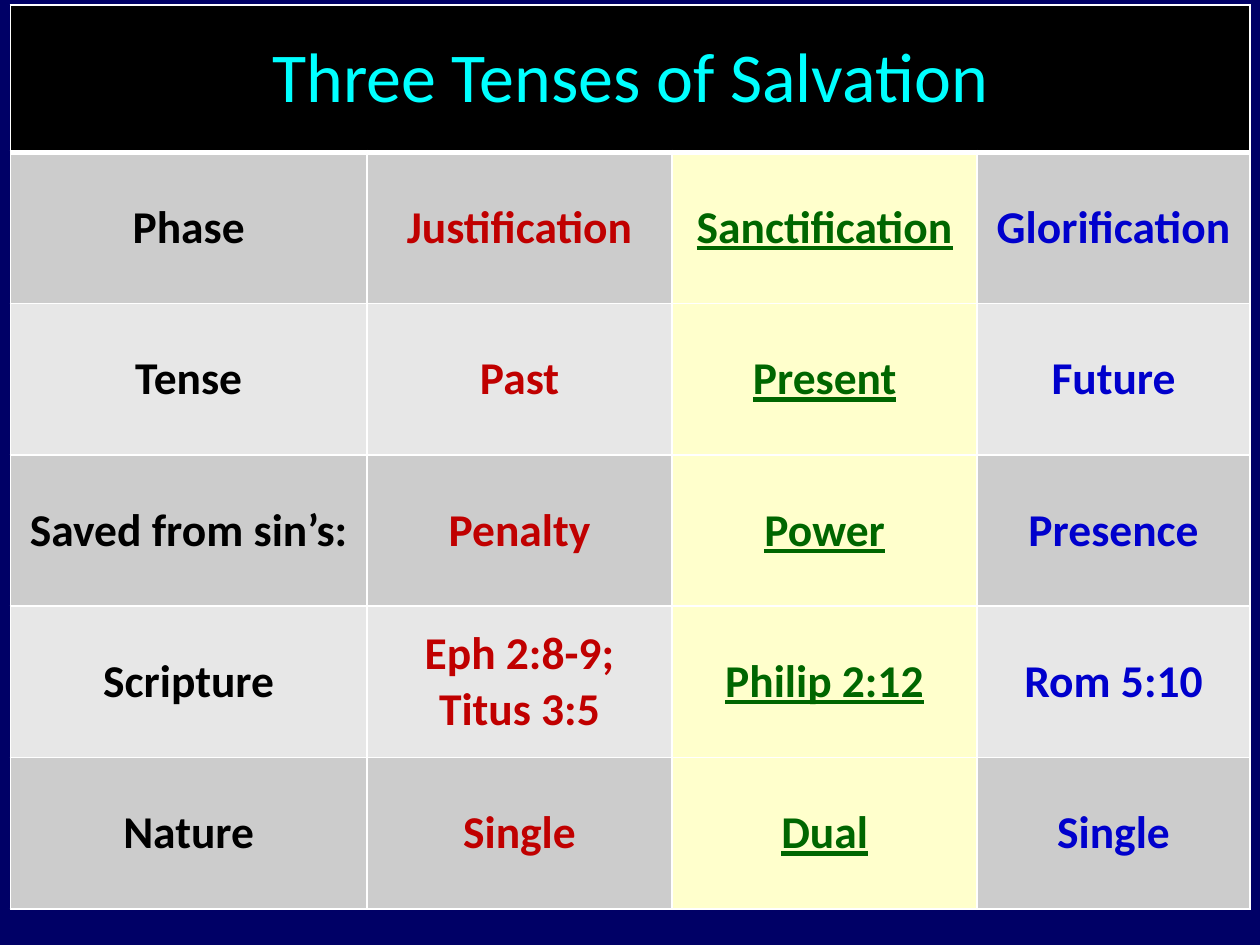
from lxml.etree import SubElement
from pptx import Presentation
from pptx.dml.color import RGBColor
from pptx.enum.text import MSO_ANCHOR, PP_ALIGN
from pptx.oxml.ns import qn
from pptx.util import Cm, Pt

NAVY = RGBColor(0x00, 0x00, 0x66)
BLACK = RGBColor(0x00, 0x00, 0x00)
WHITE = RGBColor(0xFF, 0xFF, 0xFF)
CYAN = RGBColor(0x00, 0xFF, 0xFF)
RED = RGBColor(0xC0, 0x00, 0x00)
GREEN = RGBColor(0x00, 0x66, 0x00)
BLUE = RGBColor(0x00, 0x00, 0xCC)
YELLOW = RGBColor(0xFF, 0xFF, 0xCC)
DARK_GREY = RGBColor(0xCC, 0xCC, 0xCC)
LIGHT_GREY = RGBColor(0xE7, 0xE7, 0xE7)

FONT = "Calibri"
TITLE = "Three Tenses of Salvation"
ROWS = [
    ("Phase", "Justification", "Sanctification", "Glorification"),
    ("Tense", "Past", "Present", "Future"),
    ("Saved from sin’s:", "Penalty", "Power", "Presence"),
    ("Scripture", "Eph 2:8-9; Titus 3:5", "Philip 2:12", "Rom 5:10"),
    ("Nature", "Single", "Dual", "Single"),
]
TEXT_COLORS = (BLACK, RED, GREEN, BLUE)
PRESENT_COL = 2
COL_WIDTHS = (Cm(7.19), Cm(6.15), Cm(6.15), Cm(5.5))
TITLE_HEIGHT = Cm(2.97)
ROW_HEIGHT = Cm(3.05)


def set_borders(cell, bottom=Pt(1)):
    tcPr = cell._tc.get_or_add_tcPr()
    for side in "LRTB":
        width = bottom if side == "B" else Pt(1)
        ln = SubElement(tcPr, qn(f"a:ln{side}"), w=str(width))
        fill = SubElement(ln, qn("a:solidFill"))
        SubElement(fill, qn("a:srgbClr"), val=str(WHITE))


def fill_cell(cell, color):
    cell.fill.solid()
    cell.fill.fore_color.rgb = color


def write_cell(cell, text, size, color, bold=False, underline=False):
    cell.vertical_anchor = MSO_ANCHOR.MIDDLE
    p = cell.text_frame.paragraphs[0]
    p.alignment = PP_ALIGN.CENTER
    r = p.add_run()
    r.text = text
    r.font.name = FONT
    r.font.size = Pt(size)
    r.font.bold = bold
    r.font.underline = underline
    r.font.color.rgb = color


def add_title_row(table):
    for cell in table.rows[0].cells:
        set_borders(cell, bottom=Pt(3))
        fill_cell(cell, BLACK)
    title = table.cell(0, 0)
    title.merge(table.cell(0, len(COL_WIDTHS) - 1))
    write_cell(title, TITLE, 40, CYAN)


def add_body_rows(table):
    for i, row in enumerate(ROWS, start=1):
        band = DARK_GREY if i % 2 else LIGHT_GREY
        for j, (text, color) in enumerate(zip(row, TEXT_COLORS)):
            present = j == PRESENT_COL
            cell = table.cell(i, j)
            set_borders(cell)
            fill_cell(cell, YELLOW if present else band)
            write_cell(cell, text, 26, color, bold=True, underline=present)


def add_tenses_table(s):
    height = TITLE_HEIGHT + ROW_HEIGHT * len(ROWS)
    table = s.shapes.add_table(len(ROWS) + 1, len(COL_WIDTHS), Cm(0.21),
                               Cm(0.1), sum(COL_WIDTHS), height).table
    for col, width in zip(table.columns, COL_WIDTHS):
        col.width = width
    for i, row in enumerate(table.rows):
        row.height = ROW_HEIGHT if i else TITLE_HEIGHT
    add_title_row(table)
    add_body_rows(table)


def main():
    prs = Presentation()
    prs.slide_width, prs.slide_height = Cm(25.4), Cm(19.05)
    s = prs.slides.add_slide(prs.slide_layouts[6])
    s.background.fill.solid()
    s.background.fill.fore_color.rgb = NAVY
    add_tenses_table(s)
    prs.save("out.pptx")


if __name__ == "__main__":
    main()
